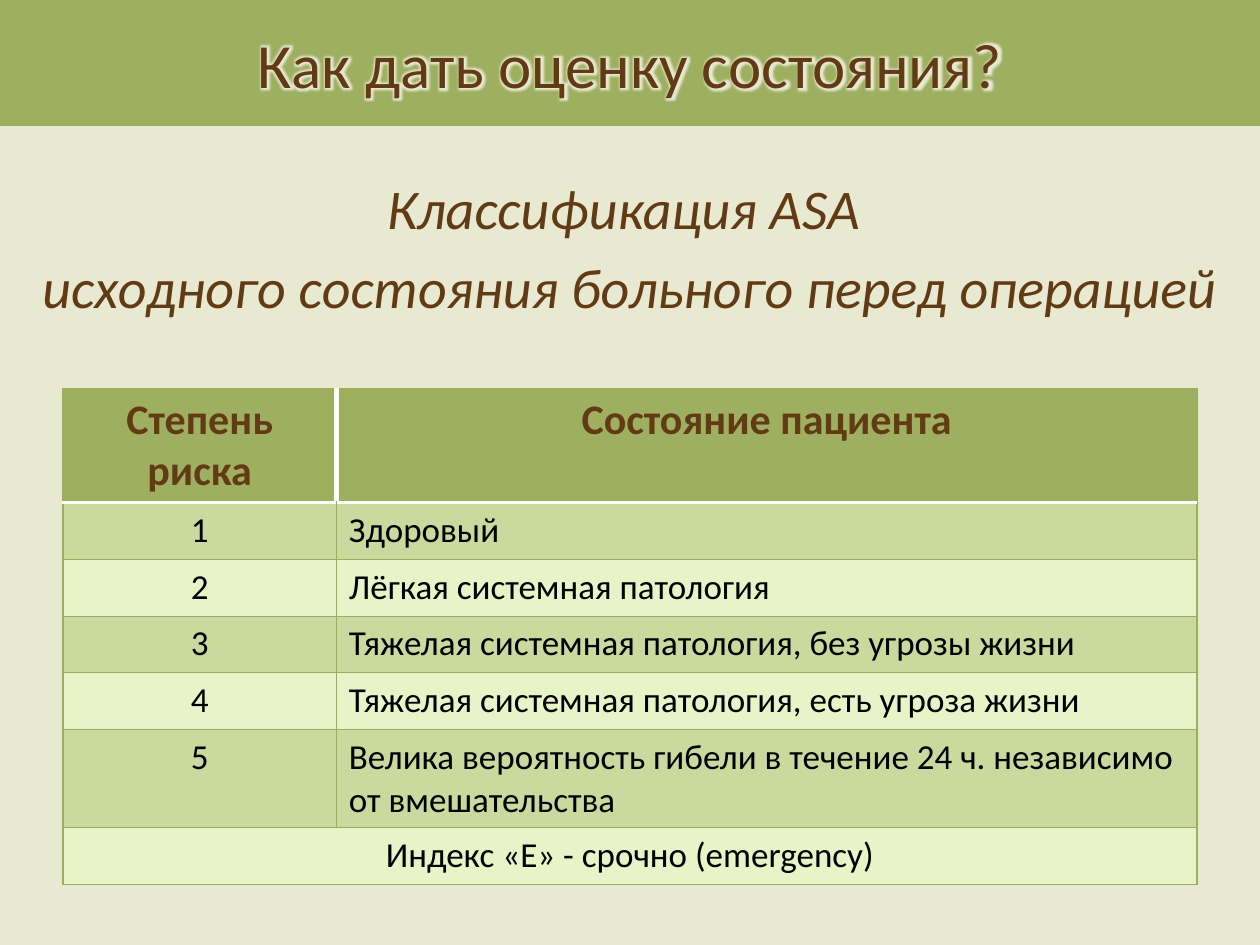
from lxml import etree
from pptx import Presentation
from pptx import util as u
from pptx.dml.color import RGBColor
from pptx.enum import shapes, text
from pptx.oxml.ns import qn

CREAM = RGBColor(0xE8, 0xE9, 0xD1)
OLIVE = RGBColor(0x9E, 0xB0, 0x60)
EDGE = RGBColor(0x9C, 0xAE, 0x5C)
DARK_BAND = RGBColor(0xCA, 0xD9, 0x9D)
LIGHT_BAND = RGBColor(0xE8, 0xF3, 0xC8)
BROWN = RGBColor(0x62, 0x3B, 0x15)
BLACK = RGBColor(0, 0, 0)
WHITE = RGBColor(255, 255, 255)

FONT = "Calibri"
CENTER, LEFT = text.PP_ALIGN.CENTER, text.PP_ALIGN.LEFT
THIN, HEADER_RULE, COLUMN_RULE = (EDGE, 0.75), (WHITE, 2), (WHITE, 3)

HEADER = ("Степень риска", "Состояние пациента")
CONDITIONS = (
    "Здоровый",
    "Лёгкая системная патология",
    "Тяжелая системная патология, без угрозы жизни",
    "Тяжелая системная патология, есть угроза жизни",
    "Велика вероятность гибели в течение 24 ч. независимо от вмешательства",
)
URGENCY = "Индекс «Е» - срочно (emergenсy)"


def grid(steps):
    """Length of a number of columns or rows, each half an inch."""
    return u.Inches(steps * 0.5)


def write(paragraph, words, size=20, color=BLACK, align=LEFT, bold=False, italic=False):
    paragraph.alignment = align
    run = paragraph.add_run()
    run.text = words
    font = run.font
    font.name, font.size = FONT, u.Pt(size)
    font.bold, font.italic = bold, italic
    font.color.rgb = color
    return run


def add_glow(run, color, radius):
    fill = run.font._element.find(qn("a:solidFill"))
    effects = etree.Element(qn("a:effectLst"))
    glow = etree.SubElement(effects, qn("a:glow"), rad=str(u.Pt(radius)))
    etree.SubElement(glow, qn("a:srgbClr"), val=str(color))
    fill.addnext(effects)


def set_borders(cell, **edges):
    """Draw the edges L, R, T and B, thin unless given as (colour, points)."""
    props = cell._tc.get_or_add_tcPr()
    for side in "LRTB":
        color, width = edges.get(side, THIN)
        line = etree.SubElement(props, qn("a:ln" + side), w=str(u.Pt(width)))
        fill = etree.SubElement(line, qn("a:solidFill"))
        etree.SubElement(fill, qn("a:srgbClr"), val=str(color))


class Deck:
    """Holds the presentation and its current slide."""

    def __init__(self):
        self.show = Presentation()
        self.show.slide_width, self.show.slide_height = grid(20), grid(15)
        self.slide = self.show.slides.add_slide(self.show.slide_layouts[6])
        background = self.slide.background.fill
        background.solid()
        background.fore_color.rgb = CREAM

    def title_band(self, words, rows):
        band = self.slide.shapes.add_shape(
            shapes.MSO_SHAPE.RECTANGLE, 0, 0, grid(20), grid(rows))
        band.shadow.inherit = False
        band.fill.solid()
        band.fill.fore_color.rgb = OLIVE
        band.line.fill.background()
        frame = band.text_frame
        frame.vertical_anchor = text.MSO_ANCHOR.MIDDLE
        run = write(frame.paragraphs[0], words, size=36, color=BROWN, align=CENTER)
        add_glow(run, CREAM, 5)

    def subtitle(self, lines, top, rows):
        frame = self.slide.shapes.add_textbox(0, grid(top), grid(20), grid(rows)).text_frame
        frame.word_wrap = True
        for index, line in enumerate(lines):
            paragraph = frame.add_paragraph() if index else frame.paragraphs[0]
            write(paragraph, line, size=32, color=BROWN, align=CENTER, italic=True)
            paragraph.space_before = u.Pt(6.4)
            props = paragraph._p.get_or_add_pPr()
            props.set("marL", str(u.Inches(0.38)))
            props.set("indent", str(u.Inches(-0.38)))

    def risk_table(self, left, top, columns, rows):
        table = self.slide.shapes.add_table(
            len(rows), len(columns), grid(left), grid(top),
            grid(sum(columns)), grid(sum(rows))).table
        table.first_row = table.horz_banding = False
        for column, width in zip(table.columns, columns):
            column.width = grid(width)
        for row, height in zip(table.rows, rows):
            row.height = grid(height)

        for column, heading in enumerate(HEADER):
            inner = "L" if column else "R"
            self.cell(table.cell(0, column), heading, OLIVE,
                      {"B": HEADER_RULE, inner: COLUMN_RULE},
                      size=24, color=BROWN, align=CENTER, bold=True)
        for degree, condition in enumerate(CONDITIONS, 1):
            band = DARK_BAND if degree % 2 else LIGHT_BAND
            edges = {"T": HEADER_RULE} if degree == 1 else {}
            self.cell(table.cell(degree, 0), str(degree), band, edges, align=CENTER)
            self.cell(table.cell(degree, 1), condition, band, edges)
        last = len(rows) - 1
        table.cell(last, 0).merge(table.cell(last, 1))
        self.cell(table.cell(last, 0), URGENCY, LIGHT_BAND, {}, align=CENTER)
        set_borders(table.cell(last, 1))

    def cell(self, cell, words, fill, edges, **style):
        set_borders(cell, **edges)
        cell.fill.solid()
        cell.fill.fore_color.rgb = fill
        write(cell.text_frame.paragraphs[0], words, **style)


def main():
    deck = Deck()
    deck.title_band("Как дать оценку состояния?", rows=2)
    deck.subtitle(("Классификация АSА ", "исходного состояния больного перед операцией"),
                  top=2.66, rows=2.84)
    deck.risk_table(left=1, top=6.16, columns=(4.34, 13.66),
                    rows=(1.82, 0.9, 0.9, 0.9, 0.9, 1.56, 0.9))
    deck.show.save("out.pptx")


if __name__ == "__main__":
    main()
